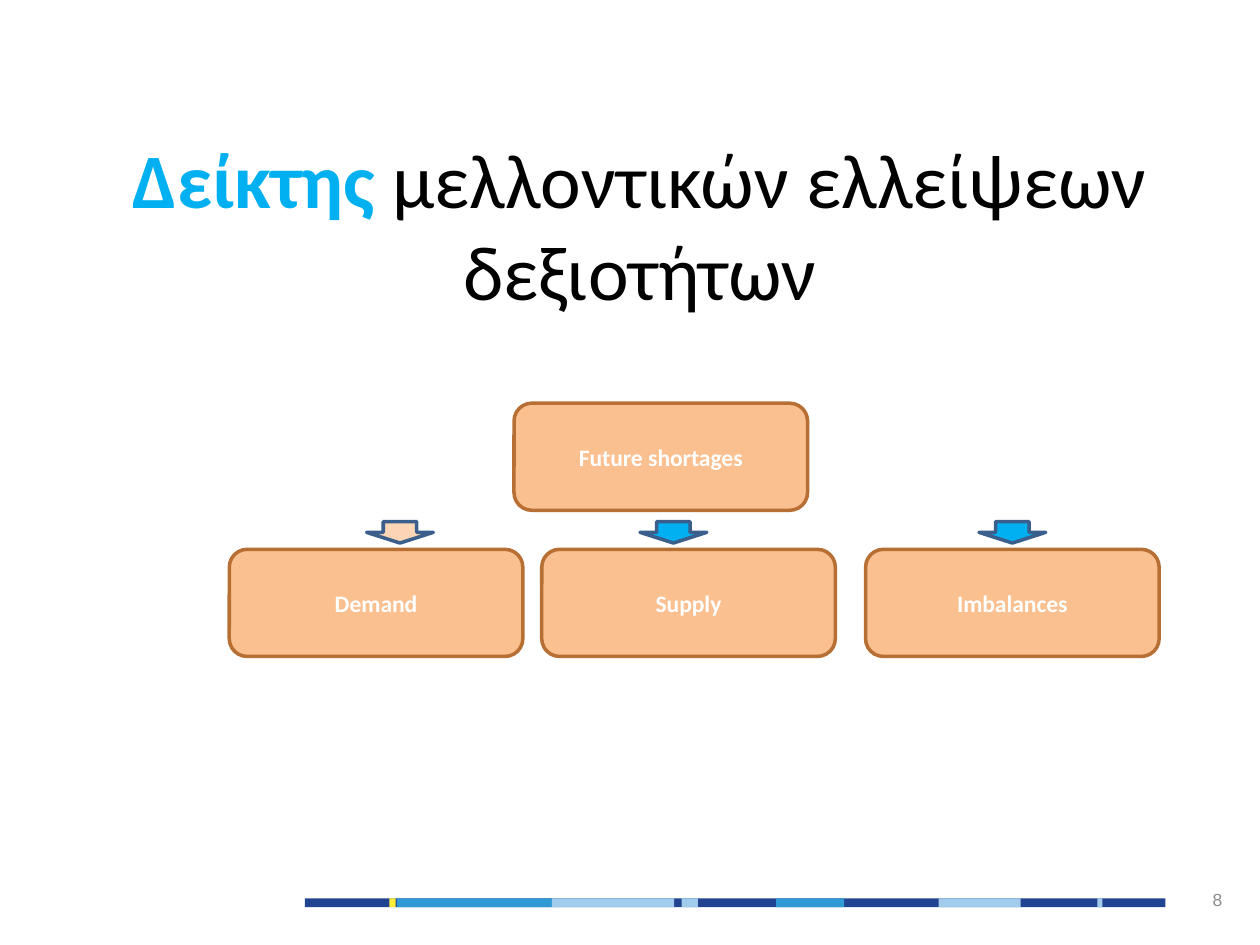
from pptx import Presentation
from pptx.dml.color import RGBColor
from pptx.enum.shapes import MSO_SHAPE
from pptx.enum.text import MSO_ANCHOR, MSO_AUTO_SIZE, PP_ALIGN
from pptx.util import Inches, Pt

COLORS = {
    "navy": "204491", "yellow": "FFEE35", "blue": "309AD5", "pale": "A0CBEB",
    "grey": "8C8C8C", "cyan": "00B0F0", "black": "000000", "white": "FFFFFF",
    "orange": "FAC090", "brown": "B76F34", "peach": "FCD5B5", "steel": "3A5F8C",
}
BAND = [
    (2.42, 6.83, "navy"), (3.09, 0.05, "yellow"), (3.15, 1.24, "blue"),
    (4.38, 0.97, "pale"), (5.41, 0.13, "pale"), (6.16, 0.54, "blue"),
    (7.45, 0.65, "pale"), (8.71, 0.04, "pale"),
]
BOXES = [
    ("Imbalances", 6.87, 4.36), ("Future shortages", 4.08, 3.2),
    ("Supply", 4.3, 4.36), ("Demand", 1.82, 4.36),
]
ARROWS = [(2.91, "peach"), (5.08, "cyan"), (7.77, "cyan")]


def rgb(name):
    """Return the named palette colour."""
    return RGBColor.from_string(COLORS[name])


def add_run(p, text, size, color, bold=False, font="Calibri"):
    """Append one formatted run to a paragraph."""
    r = p.add_run()
    r.text = text
    r.font.name = font
    r.font.size = Pt(size)
    r.font.bold = bold
    r.font.color.rgb = rgb(color)


def add_block(s, kind, x, y, w, h, fill, line=None):
    """Add a filled preset shape, outlined when a line colour is given."""
    sp = s.shapes.add_shape(kind, Inches(x), Inches(y), Inches(w), Inches(h))
    sp.shadow.inherit = False
    sp.fill.solid()
    sp.fill.fore_color.rgb = rgb(fill)
    if line:
        sp.line.color.rgb = rgb(line)
        sp.line.width = Pt(2)
    else:
        sp.line.fill.background()
    return sp


def add_box(s, text, x, y):
    """Add a labelled rounded box."""
    sp = add_block(s, MSO_SHAPE.FLOWCHART_ALTERNATE_PROCESS,
                   x, y, 2.33, 0.85, "orange", "brown")
    tf = sp.text_frame
    tf.vertical_anchor = MSO_ANCHOR.MIDDLE
    p = tf.paragraphs[0]
    p.alignment = PP_ALIGN.CENTER
    add_run(p, text, 13.5, "white", bold=True)


def add_page_number(s, text):
    """Add the right-aligned page number."""
    tf = s.shapes.add_textbox(Inches(7.47), Inches(6.94), Inches(2.33), Inches(0.4)).text_frame
    tf.word_wrap = True
    tf.vertical_anchor = MSO_ANCHOR.MIDDLE
    p = tf.paragraphs[0]
    p.alignment = PP_ALIGN.RIGHT
    add_run(p, text, 10, "grey", font="Arial")


def set_title(s):
    """Place and fill the title placeholder."""
    sp = s.shapes.title
    sp.left, sp.top, sp.width, sp.height = map(Inches, (0.58, 0.99, 9, 1.25))
    tf = sp.text_frame
    tf.word_wrap = True
    tf.auto_size = MSO_AUTO_SIZE.NONE
    tf.vertical_anchor = MSO_ANCHOR.TOP
    p = tf.paragraphs[0]
    p.alignment = PP_ALIGN.CENTER
    add_run(p, "Δείκτης ", 44, "cyan", bold=True)
    add_run(p, "μελλοντικών ελλείψεων δεξιοτήτων", 44, "black")


def main():
    """Build the slide and save it."""
    prs = Presentation()
    prs.slide_width, prs.slide_height = Inches(10), Inches(7.5)
    s = prs.slides.add_slide(prs.slide_layouts[5])
    for x, w, fill in BAND:
        add_block(s, MSO_SHAPE.RECTANGLE, x, 7.13, w, 0.07, fill)
    add_page_number(s, "8")
    set_title(s)
    for text, x, y in BOXES:
        add_box(s, text, x, y)
    for x, fill in ARROWS:
        add_block(s, MSO_SHAPE.DOWN_ARROW, x, 4.14, 0.53, 0.17, fill, "steel")
    prs.save("out.pptx")


if __name__ == "__main__":
    main()
